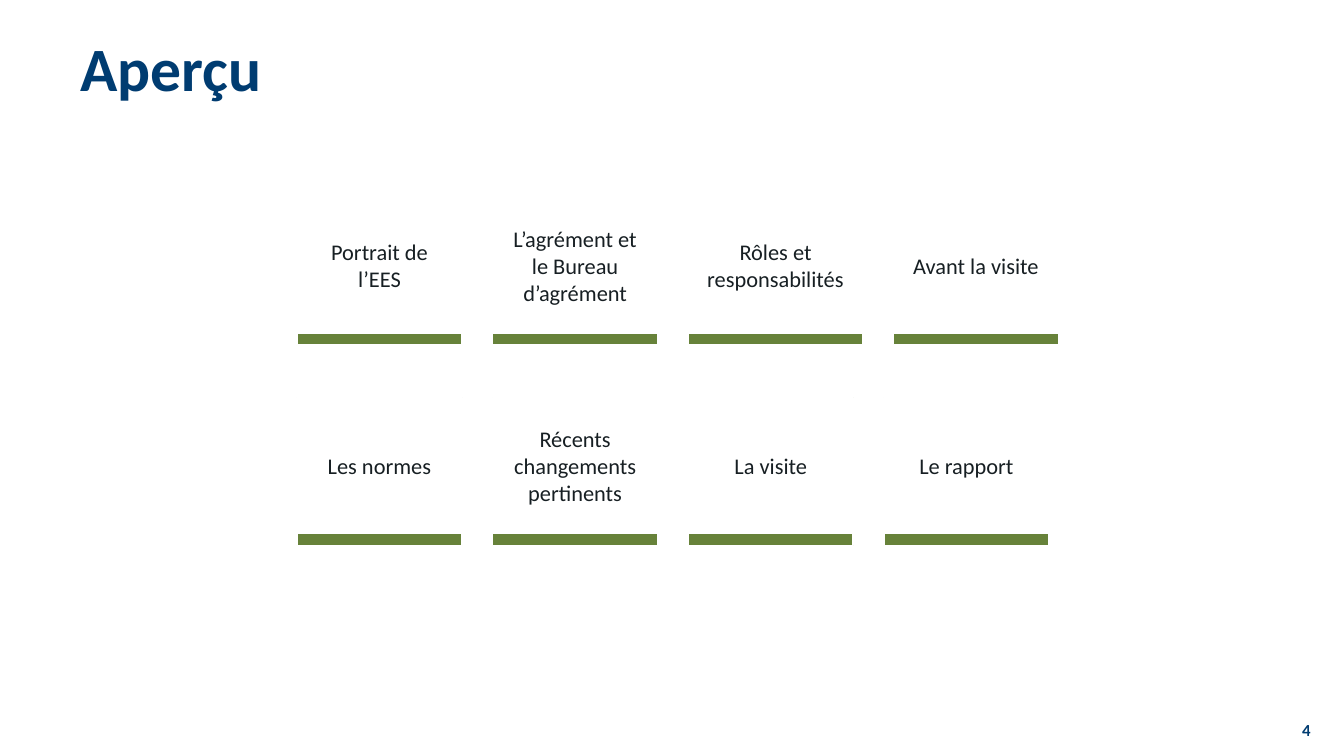
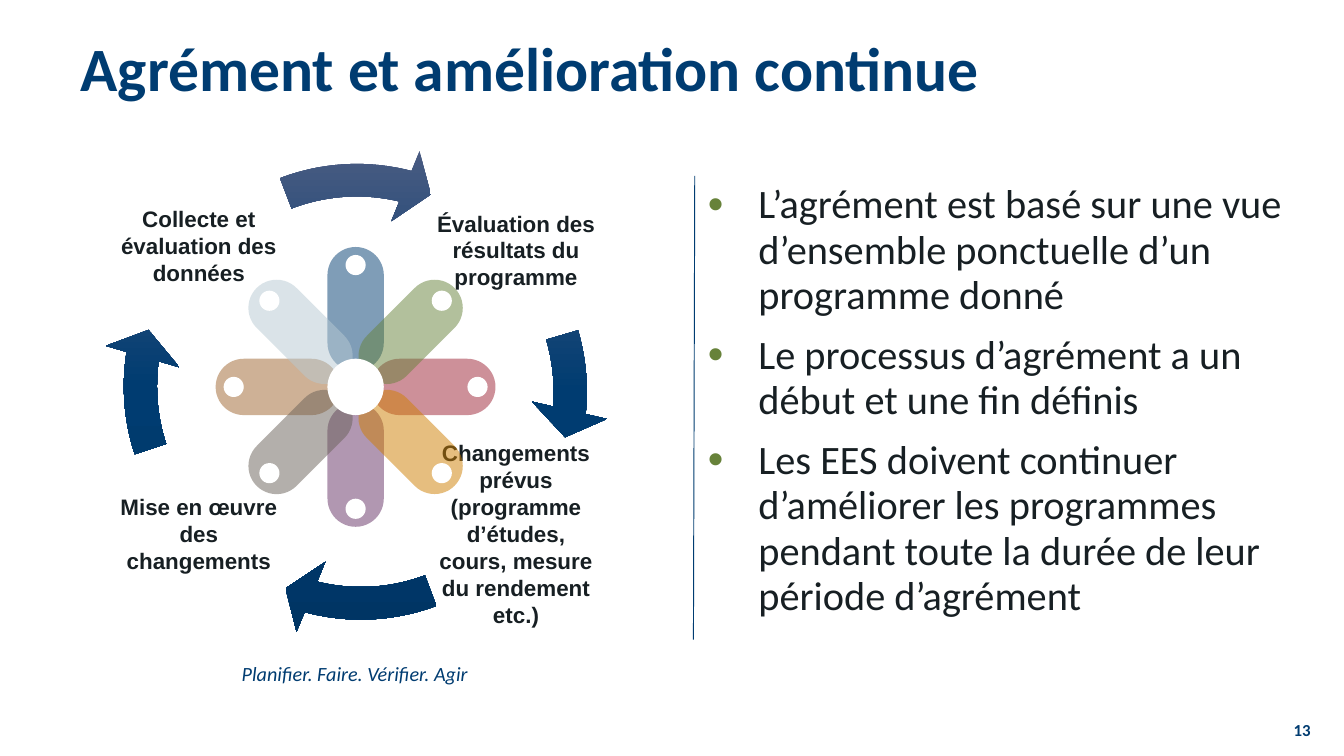
from copy import deepcopy
from dataclasses import dataclass
from math import cos, radians, sin

from lxml.etree import SubElement
from pptx import Presentation
from pptx.dml.color import RGBColor
from pptx.enum.shapes import MSO_CONNECTOR, MSO_SHAPE
from pptx.enum.text import MSO_ANCHOR, PP_ALIGN
from pptx.oxml.ns import qn
from pptx.presentation import Presentation as Deck
from pptx.shapes.autoshape import Shape
from pptx.shapes.shapetree import GroupShapes
from pptx.slide import Slide
from pptx.text.text import TextFrame
from pptx.util import Pt

NAVY = RGBColor(0x00, 0x3C, 0x71)
DEEP_NAVY = RGBColor(0x00, 0x35, 0x64)
SLATE = RGBColor(0x4B, 0x5C, 0x82)
GREEN = RGBColor(0x67, 0x82, 0x3A)
INK = RGBColor(0x17, 0x1F, 0x23)
WHITE = RGBColor(0xFF, 0xFF, 0xFF)
BROWN = RGBColor(0x9E, 0x65, 0x2E)
RED = RGBColor(0x9D, 0x22, 0x35)
PURPLE = RGBColor(0x65, 0x31, 0x65)
PALE_BLUE = RGBColor(0xB7, 0xC9, 0xD3)
AMBER = RGBColor(0xCF, 0x7F, 0x00)
GREY = RGBColor(0x69, 0x61, 0x58)

BODY_FONT = "Calibri"
LABEL_FONT = "Arial"

TILE_LEFT, TILE_WIDTH, TILE_GAP = 159.1, 88.5, 16.3
TILE_HEIGHT, TILE_FACE_HEIGHT = 79.2, 72.7

FLOWER_X, FLOWER_Y = 190.5, 207.3
PETAL_LENGTH, PETAL_THICKNESS, PETAL_RADIUS = 66.5, 30.2, 41.7
DOT_SIZE, DOT_RADIUS = 10.8, 65.3


@dataclass(frozen=True)
class Box:
    """Position and size in points."""
    left: float
    top: float
    width: float
    height: float


@dataclass(frozen=True)
class Topic:
    text: str
    width: float = TILE_WIDTH


@dataclass(frozen=True)
class TopicRow:
    top: float
    topics: tuple[Topic, ...]


@dataclass(frozen=True)
class Stage:
    """A step of the cycle and the arrow that goes with it."""
    text: str
    label: Box
    arrow_left: float
    arrow_top: float
    arrow_size: float
    arrow_end: float
    arrow_start: float


@dataclass(frozen=True)
class Petal:
    """Angle is clockwise from the right, in degrees."""
    angle: int
    color: RGBColor


TOPIC_ROWS = (
    TopicRow(105.8, (
        Topic("Portrait de l’EES"),
        Topic("L’agrément et le Bureau d’agrément"),
        Topic("Rôles et responsabilités", 93.6),
        Topic("Avant la visite"),
    )),
    TopicRow(213.1, (
        Topic("Les normes"),
        Topic("Récents changements pertinents"),
        Topic("La visite"),
        Topic("Le rapport"),
    )),
)

STAGES = (
    Stage("Évaluation des résultats du programme",
          Box(231.1, 88.6, 90.7, 90.7), 69.1, 81.4, 257, 3.173, 206.189),
    Stage("Changements prévus (programme d’études, cours, mesure du rendement etc.)",
          Box(231.1, 234, 90.7, 103.7), 67, 90.7, 252.7, 62.774, 41.636),
    Stage("Mise en œuvre des changements",
          Box(61.2, 240.5, 90.7, 90.7), 54.7, 78.5, 257, 113.088, 97.102),
    Stage("Collecte et évaluation des données",
          Box(61.2, 86.4, 90.7, 90.7), 64.8, 76.3, 252.7, 170.523, 149.388),
)

PETAL_PAIRS = (
    (Petal(180, BROWN), Petal(0, RED)),
    (Petal(270, NAVY), Petal(90, PURPLE)),
    (Petal(225, PALE_BLUE), Petal(45, AMBER)),
    (Petal(315, GREEN), Petal(135, GREY)),
)

KEY_POINTS = (
    "L’agrément est basé sur une vue d’ensemble ponctuelle d’un programme donné",
    "Le processus d’agrément a un début et une fin définis",
    "Les EES doivent continuer d’améliorer les programmes pendant toute la "
    "durée de leur période d’agrément",
)


def write(frame: TextFrame, text: str, size: float, color: RGBColor,
          align: PP_ALIGN = PP_ALIGN.CENTER, font_name: str = BODY_FONT,
          bold: bool = False, italic: bool = False,
          anchor: MSO_ANCHOR = MSO_ANCHOR.MIDDLE) -> None:
    frame.word_wrap = True
    frame.vertical_anchor = anchor
    paragraph = frame.paragraphs[0]
    paragraph.text = text
    paragraph.alignment = align
    font = paragraph.font
    font.name, font.size, font.bold, font.italic = font_name, Pt(size), bold, italic
    font.color.rgb = color


def add_text_box(shapes: GroupShapes, box: Box) -> TextFrame:
    return shapes.add_textbox(Pt(box.left), Pt(box.top),
                              Pt(box.width), Pt(box.height)).text_frame


def add_preset(shapes: GroupShapes, preset: MSO_SHAPE, box: Box) -> Shape:
    """Add a preset shape with no shadow and no outline."""
    shape = shapes.add_shape(preset, Pt(box.left), Pt(box.top),
                             Pt(box.width), Pt(box.height))
    shape.shadow.inherit = False
    shape.line.fill.background()
    return shape


def add_solid(shapes: GroupShapes, preset: MSO_SHAPE, box: Box,
              color: RGBColor) -> Shape:
    shape = add_preset(shapes, preset, box)
    shape.fill.solid()
    shape.fill.fore_color.rgb = color
    return shape


def add_titled_slide(deck: Deck, title: str, number: int) -> Slide:
    slide = deck.slides.add_slide(deck.slide_layouts[5])
    heading = slide.shapes.title
    heading.left, heading.top = Pt(36), Pt(4.3)
    heading.width, heading.height = Pt(648), Pt(67.7)
    write(heading.text_frame, title, 33, NAVY, PP_ALIGN.LEFT, bold=True)
    heading.text_frame.paragraphs[0].line_spacing = 0.9
    page_number = add_text_box(slide.shapes, Box(683.3, 385.2, 25.9, 11.5))
    write(page_number, str(number), 9, NAVY, PP_ALIGN.RIGHT, bold=True)
    return slide


def add_topic_tile(slide: Slide, topic: Topic, left: float, top: float) -> None:
    tile = slide.shapes.add_group_shape().shapes
    for height, color in ((TILE_HEIGHT, GREEN), (TILE_FACE_HEIGHT, WHITE)):
        face = add_solid(tile, MSO_SHAPE.RECTANGLE,
                         Box(left, top, topic.width, height), color)
        face.line.color.rgb = WHITE
        face.line.width = Pt(1)
    write(face.text_frame, topic.text, 12, INK)


def add_overview(deck: Deck) -> None:
    slide = add_titled_slide(deck, "Aperçu", 4)
    for row in TOPIC_ROWS:
        left = TILE_LEFT
        for topic in row.topics:
            add_topic_tile(slide, topic, left, row.top)
            left += topic.width + TILE_GAP


def fill_downward_gradient(shape: Shape) -> None:
    """Fill from slate through navy at the middle to deep navy."""
    shape.fill.gradient()
    shape.fill.gradient_angle = 270
    stop_list = shape._element.spPr.find(qn("a:gradFill")).find(qn("a:gsLst"))
    stop_list.insert(1, deepcopy(stop_list[0]))
    colors = (SLATE, NAVY, DEEP_NAVY)
    for index, (stop, color) in enumerate(zip(shape.fill.gradient_stops, colors)):
        stop.color.rgb = color
        stop.position = index / 2


def add_stage(shapes: GroupShapes, stage: Stage) -> None:
    label = add_text_box(shapes, stage.label)
    label.margin_left = label.margin_right = Pt(1.5)
    label.margin_top = label.margin_bottom = Pt(1.5)
    write(label, stage.text, 12, INK, font_name=LABEL_FONT, bold=True)
    arrow = add_preset(shapes, MSO_SHAPE.CIRCULAR_ARROW,
                       Box(stage.arrow_left, stage.arrow_top,
                           stage.arrow_size, stage.arrow_size))
    settings = (0.069, 4.65, stage.arrow_end, stage.arrow_start, 0.08)
    for index, setting in enumerate(settings):
        arrow.adjustments[index] = setting
    fill_downward_gradient(arrow)


def box_on_ray(angle: float, radius: float, width: float, height: float) -> Box:
    """Box centred at a distance from the flower's centre."""
    x = FLOWER_X + radius * cos(radians(angle))
    y = FLOWER_Y + radius * sin(radians(angle))
    return Box(x - width / 2, y - height / 2, width, height)


def add_petal(shapes: GroupShapes, petal: Petal) -> None:
    blade = add_solid(
        shapes, MSO_SHAPE.ROUNDED_RECTANGLE,
        box_on_ray(petal.angle, PETAL_RADIUS, PETAL_LENGTH, PETAL_THICKNESS),
        petal.color)
    blade.adjustments[0] = 0.5
    blade.rotation = petal.angle % 180
    color = next(blade._element.spPr.iter(qn("a:srgbClr")))
    SubElement(color, qn("a:alpha"), val="50000")


def add_flower(shapes: GroupShapes) -> None:
    for pair in PETAL_PAIRS:
        for petal in pair:
            add_petal(shapes, petal)
        for petal in pair:
            add_solid(shapes, MSO_SHAPE.OVAL,
                      box_on_ray(petal.angle, DOT_RADIUS, DOT_SIZE, DOT_SIZE), WHITE)
    add_solid(shapes, MSO_SHAPE.OVAL,
              box_on_ray(0, 0, PETAL_THICKNESS, PETAL_THICKNESS), WHITE)


def add_key_points(slide: Slide) -> None:
    frame = add_text_box(slide.shapes, Box(372.2, 94.3, 322.6, 264.2))
    frame.word_wrap = True
    for index, text in enumerate(KEY_POINTS):
        paragraph = frame.add_paragraph() if index else frame.paragraphs[0]
        paragraph.text = text
        properties = paragraph._p.get_or_add_pPr()
        properties.set("marL", str(Pt(27)))
        properties.set("indent", str(-Pt(27)))
        bullet_color = SubElement(properties, qn("a:buClr"))
        SubElement(bullet_color, qn("a:srgbClr"), val=str(GREEN))
        SubElement(properties, qn("a:buSzPct"), val="110000")
        SubElement(properties, qn("a:buFont"), typeface=LABEL_FONT)
        SubElement(properties, qn("a:buChar"), char="•")
        paragraph.line_spacing = 0.94
        if index:
            paragraph.space_before = Pt(7.5)
        paragraph.font.name, paragraph.font.size = BODY_FONT, Pt(21.6)
        paragraph.font.color.rgb = INK


def add_divider(slide: Slide) -> None:
    divider = slide.shapes.add_connector(MSO_CONNECTOR.STRAIGHT, Pt(372.2), Pt(94.3),
                                         Pt(371.5), Pt(342.7))
    divider.line.color.rgb = NAVY
    divider.line.width = Pt(0.5)
    SubElement(divider._element.spPr, qn("a:effectLst"))


def add_improvement_cycle(deck: Deck) -> None:
    slide = add_titled_slide(deck, "Agrément et amélioration continue", 13)
    add_key_points(slide)
    caption = add_text_box(slide.shapes, Box(71.3, 350.6, 237.6, 19.4))
    write(caption, "Planifier. Faire. Vérifier. Agir", 10.8, NAVY,
          italic=True, anchor=MSO_ANCHOR.TOP)
    caption.paragraphs[0].space_after = Pt(12)
    add_divider(slide)
    cycle = slide.shapes.add_group_shape().shapes
    for stage in STAGES:
        add_stage(cycle, stage)
    add_flower(cycle)


def main() -> None:
    deck = Presentation()
    deck.slide_width, deck.slide_height = Pt(720), Pt(405)
    add_overview(deck)
    add_improvement_cycle(deck)
    deck.save("out.pptx")


if __name__ == "__main__":
    main()
